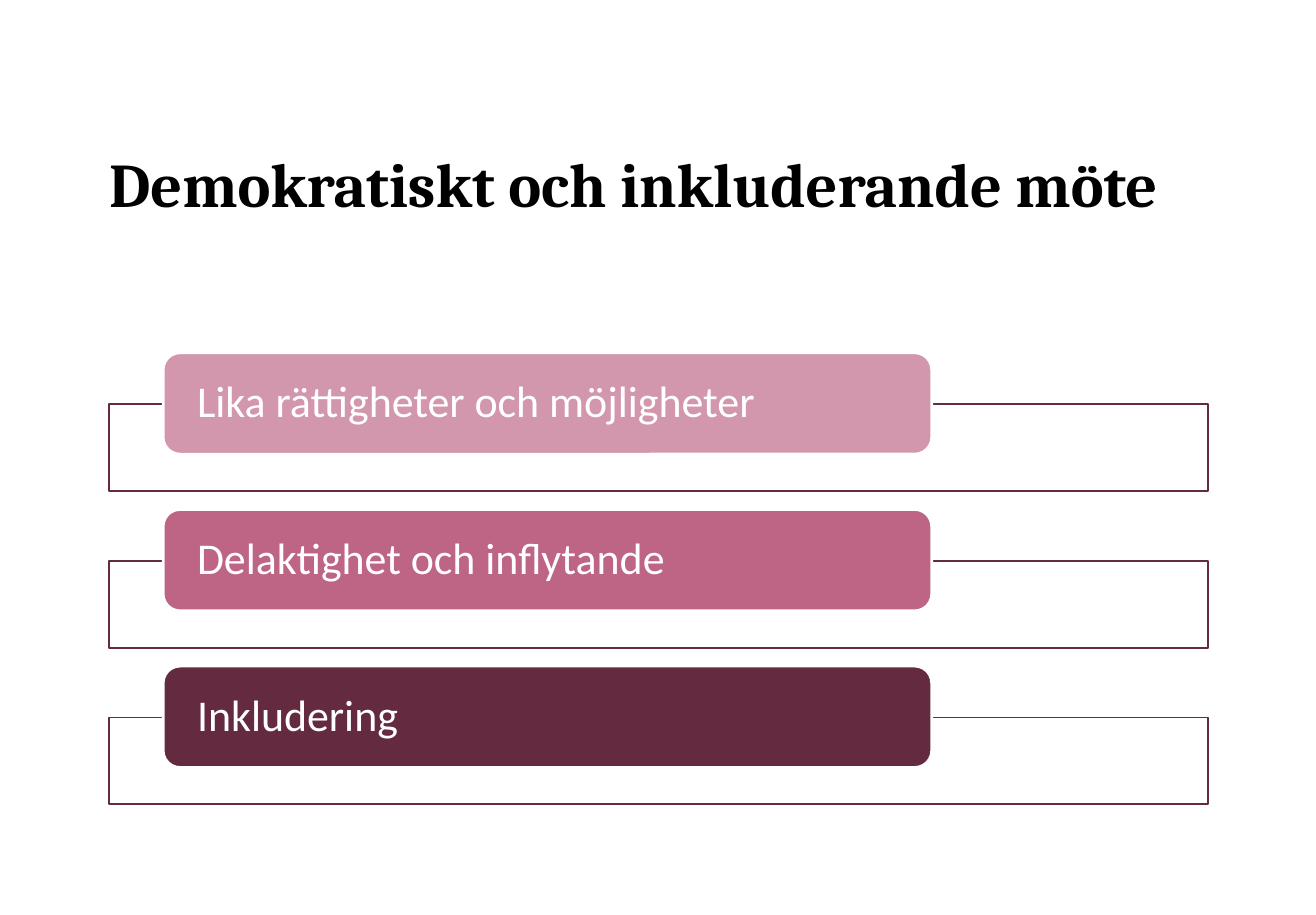
"""Builds a slide with a title and three labelled frames on democratic meetings."""
from pptx import Presentation
from pptx.dml.color import RGBColor
from pptx.enum.shapes import MSO_SHAPE as Shape
from pptx.enum.text import MSO_ANCHOR as Anchor, PP_ALIGN as Align
from pptx.oxml.ns import qn
from pptx.util import Inches, Pt
from lxml.etree import SubElement

BLACK = RGBColor(0x00, 0x00, 0x00)
WHITE = RGBColor(0xFF, 0xFF, 0xFF)
PINK = RGBColor(0xD3, 0x97, 0xAD)
ROSE = RGBColor(0xBE, 0x64, 0x84)
PLUM = RGBColor(0x64, 0x2A, 0x3F)

TOPICS = [
    ("Lika rättigheter och möjligheter", PINK),
    ("Delaktighet och inflytande", ROSE),
    ("Inkludering", PLUM),
]
LEFT, WIDTH = 0.83, 8.35
FIRST_TOP, STEP = 2.68, 1.19
FRAME_DROP = 0.39


def write(box, text, *, font, size, color, bold=False, anchor=Anchor.MIDDLE, inset=0):
    frame = box.text_frame
    frame.word_wrap = True
    frame.vertical_anchor = anchor
    frame.margin_left = frame.margin_right = Inches(inset)
    frame.margin_top = frame.margin_bottom = 0
    para = frame.paragraphs[0]
    para.alignment = Align.LEFT
    para.line_spacing = 0.9
    span = para.add_run()
    span.text = text
    span.font.name = font
    span.font.size = Pt(size)
    span.font.bold = bold
    span.font.color.rgb = color


class Painter:
    def __init__(self, page, heading_font="Cambria", body_font="Calibri"):
        self.page = page
        self.heading_font = heading_font
        self.body_font = body_font

    def shape(self, kind, left, top, width, height, fill, line, weight):
        box = self.page.shapes.add_shape(
            kind, Inches(left), Inches(top), Inches(width), Inches(height))
        box.shadow.inherit = False
        box.fill.solid()
        box.fill.fore_color.rgb = fill
        box.line.color.rgb = line
        box.line.width = Pt(weight)
        return box

    def title(self, text):
        box = self.page.shapes.add_textbox(
            Inches(LEFT), Inches(0.84), Inches(WIDTH), Inches(0.84))
        write(box, text, font=self.heading_font, size=34, color=BLACK,
              bold=True, anchor=Anchor.BOTTOM)

    def frame(self, top):
        box = self.shape(Shape.RECTANGLE, LEFT, top, WIDTH, 0.66, WHITE, PLUM, 1)
        color = box.fill._xPr.find(qn("a:solidFill"))[0]
        SubElement(color, qn("a:alpha"), val="90000")

    def label(self, text, top, fill):
        box = self.shape(Shape.ROUNDED_RECTANGLE, 1.24, top, 5.84, 0.77, fill, WHITE, 1.5)
        write(box, text, font=self.body_font, size=24, color=WHITE, inset=0.22)


def main():
    deck = Presentation()
    deck.slide_width = Inches(10)
    deck.slide_height = Inches(6.95)
    painter = Painter(deck.slides.add_slide(deck.slide_layouts[6]))
    painter.title("Demokratiskt och inkluderande möte")
    for index, (topic, fill) in enumerate(TOPICS):
        top = FIRST_TOP + index * STEP
        painter.frame(top + FRAME_DROP)
        painter.label(topic, top, fill)
    deck.save("out.pptx")


if __name__ == "__main__":
    main()
